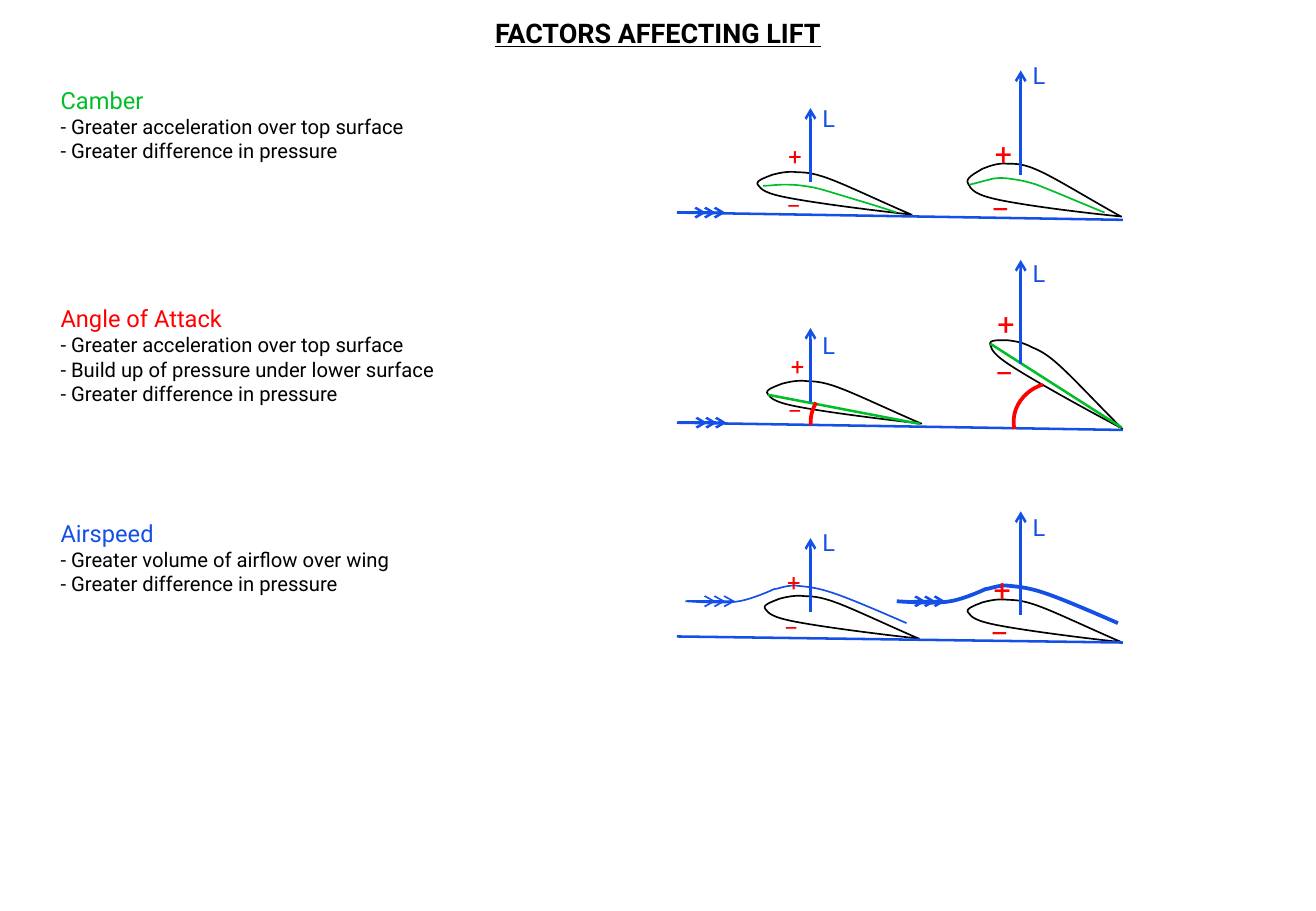
"""Build a slide on the factors that affect the lift of a wing."""
from lxml.etree import SubElement
from pptx import Presentation
from pptx.dml.color import RGBColor
from pptx.enum.shapes import MSO_CONNECTOR, MSO_SHAPE
from pptx.enum.text import MSO_ANCHOR, MSO_AUTO_SIZE, PP_ALIGN
from pptx.oxml.ns import qn
from pptx.util import Pt

PX = 9144
LINE_GAP = 16.75
COLORS = {"black": "000000", "green": "00BE28", "red": "FF0000", "blue": "1450E6"}

SECTIONS = [
    (0, "Camber", "green",
     ["Greater acceleration over top surface", "Greater difference in pressure"]),
    (5, "Angle of Attack", "red",
     ["Greater acceleration over top surface",
      "Build up of pressure under lower surface", "Greater difference in pressure"]),
    (4, "Airspeed", "blue",
     ["Greater volume of airflow over wing", "Greater difference in pressure"]),
]
WING = [(130, 22), (90, 23), (50, 23), (29, 22), (7, 21), (4, 18), (1, 15),
        (-3, 12), (6, 8), (11, 5), (16, 3), (23, 0), (32, 0), (40, -1),
        (47, -1), (63, 3), (79, 7), (104, 15), (129, 22)]
WINGS = [(623, 146, 7.7, 1), (796, 139, 7.7, 1.39), (631, 318, 7.7, 1),
         (808, 300, 29.3, 1), (629, 495, 7.7, 1), (796, 498, 7.7, 1)]
LOW_CAMBER = [(0, 0), (6, 0), (11, -1), (17, -1), (19, -1), (26, -1), (33, 0),
              (39, 1), (42, 1), (55, 5), (68, 9), (89, 15), (110, 22)]
HIGH_CAMBER = [(0, 0), (5, -1), (11, -3), (16, -4), (18, -5), (25, -6), (32, -5),
               (38, -4), (42, -4), (55, 0), (68, 5), (89, 14), (111, 23)]
AIRFLOW = [(0, 0), (16, 1), (32, 2), (44, 0), (56, -2), (73, -10), (73, -10),
           (76, -10), (82, -13), (90, -13), (98, -12), (106, -12), (121, -7),
           (136, -2), (159, 8), (182, 18)]
GROUND_LINES = [(175, 181), (348, 354), (524, 529)]
CHORDS = [((757, 349), (632, 325)), ((923, 352), (815, 283))]
ANGLE_ARCS = [(670, 165.21, 185.29), (837, 162, 212.31)]
WIND_ARROWS = [(557, 175, 1.5), (558, 348, 1.5), (565, 495, 1), (738, 495, 1.5)]
LIFTS = [(667, 150, 89), (667, 331, 270), (667, 504, 443),
         (840, 144, 58), (840, 300, 214), (840, 506, 421)]
LIFT_LABELS = [(667, 81, 74, 387, (0, 7, 6)), (840, 45, 46, 411, (0, 6, 8))]
SIGNS = [("+", 639, 112, 14), ("_", 639, 145, 14), ("+", 809, 106, 18),
         ("_", 808, 142, 18), ("+", 641, 285, 14), ("_", 640, 314, 14),
         ("+", 811, 246, 18), ("_", 811, 277, 18), ("+", 638, 463, 14),
         ("_", 637, 492, 14), ("+", 808, 465, 18), ("_", 807, 491, 18)]


def apply_values(target, values):
    """Set each named attribute of the target."""
    for name, value in values.items():
        setattr(target, name, value)


def write_span(para, text, size, color, **extra):
    """Add one formatted run of text to a paragraph."""
    span = para.add_run()
    span.text = text
    apply_values(span.font, {"name": "Roboto", "size": Pt(size), **extra})
    span.font.color.rgb = RGBColor.from_string(COLORS[color])


def add_title(page, text):
    """Place and format the title placeholder."""
    title = page.shapes.title
    apply_values(title, {"left": 0, "top": 9 * PX, "width": 1083 * PX, "height": 37 * PX})
    apply_values(title.text_frame, {"word_wrap": True, "vertical_anchor": MSO_ANCHOR.TOP,
                                    "auto_size": MSO_AUTO_SIZE.NONE})
    para = title.text_frame.paragraphs[0]
    apply_values(para, {"alignment": PP_ALIGN.CENTER, "line_spacing": 1.0,
                        "space_before": Pt(0)})
    write_span(para, text, 16, "black", bold=True, underline=True)


def add_text(page, left, top, width, height, lines):
    """Add a text box with one paragraph for each (gap, text, size, color) line."""
    box = page.shapes.add_textbox(left * PX, top * PX, width * PX, height * PX)
    frame = box.text_frame
    frame.word_wrap = True
    for index, (gap, *words) in enumerate(lines):
        para = frame.add_paragraph() if index else frame.paragraphs[0]
        para.space_before = Pt(gap * LINE_GAP)
        write_span(para, *words)


def add_sections(page):
    """Write the three factors and their effects in one text box."""
    lines = []
    for gap, heading, color, effects in SECTIONS:
        lines.append((gap, heading, 14, color))
        lines += [(0, f"- {effect}", 12, "black") for effect in effects]
    add_text(page, 40, 66, 477, 434, lines)


def style_line(shape, color, width):
    """Set the colour and the width in points of a line."""
    shape.line.color.rgb = RGBColor.from_string(COLORS[color])
    shape.line.width = Pt(width)


def add_line(page, start, end, color, width=1.5, arrow=False):
    """Draw a straight line, with an open arrowhead at its end if wanted."""
    ends = [value * PX for value in (*start, *end)]
    line = page.shapes.add_connector(MSO_CONNECTOR.STRAIGHT, *ends)
    style_line(line, color, width)
    if arrow:
        SubElement(line.line._get_or_add_ln(), qn("a:tailEnd"), type="arrow")
    SubElement(line._element.spPr, qn("a:effectLst"))


def bend_segments(shape):
    """Turn each three line segments of a freeform into one Bezier curve."""
    segments = list(shape._element.iter(qn("a:lnTo")))
    for first in range(0, len(segments), 3):
        bend, *others = segments[first:first + 3]
        bend.tag = qn("a:cubicBezTo")
        for other in others:
            bend.append(other[0])
            other.getparent().remove(other)


def add_curve(page, controls, left, top, color, width=1, rotation=0, stretch=1):
    """Draw an open curve whose control points are relative to left and top."""
    points = [((left + x) * PX, (top + y * stretch) * PX) for x, y in controls]
    builder = page.shapes.build_freeform(*points[0])
    builder.add_line_segments(points[1:], close=False)
    curve = builder.convert_to_shape()
    bend_segments(curve)
    curve.fill.background()
    style_line(curve, color, width)
    curve.shadow.inherit = False
    curve.rotation = rotation


def add_angle_arc(page, left, start, end):
    """Draw the arc that marks an angle of attack."""
    arc = page.shapes.add_shape(MSO_SHAPE.ARC, left * PX, 312 * PX, 62 * PX, 68 * PX)
    arc.adjustments[0], arc.adjustments[1] = start, end
    arc.rotation = 257.8
    arc.fill.background()
    style_line(arc, "red", 2.25)
    arc.shadow.inherit = False


def add_wind(page, left, top, width):
    """Draw three overlapping arrows that show the wind direction."""
    for shift in (0, 8, 16):
        add_line(page, (left + shift, top), (left + shift + 24, top), "blue", width, True)


def main():
    """Build and save the slide."""
    deck = Presentation()
    apply_values(deck, {"slide_width": 1083 * PX, "slide_height": 750 * PX})
    page = deck.slides.add_slide(deck.slide_layouts[5])
    add_title(page, "FACTORS AFFECTING LIFT")
    add_sections(page)
    for left, top, rotation, stretch in WINGS:
        add_curve(page, WING, left, top, "black", 1, rotation, stretch)
    for start, end in GROUND_LINES:
        add_line(page, (557, start), (924, end), "blue")
    add_curve(page, LOW_CAMBER, 628, 153, "green")
    add_curve(page, HIGH_CAMBER, 798, 152, "green")
    for tail, nose in CHORDS:
        add_line(page, tail, nose, "green")
    for arc in ANGLE_ARCS:
        add_angle_arc(page, *arc)
    for left, width in ((564, 1), (738, 2.25)):
        add_curve(page, AIRFLOW, left, 495, "blue", width)
    for wind in WIND_ARROWS:
        add_wind(page, *wind)
    for left, bottom, tip in LIFTS:
        add_line(page, (left, bottom), (left, tip), "blue", arrow=True)
    for left, top, width, height, gaps in LIFT_LABELS:
        add_text(page, left, top, width, height, [(gap, "L", 14, "blue") for gap in gaps])
    for sign, left, top, size in SIGNS:
        add_text(page, left, top, 34, 34 if size == 14 else 40, [(0, sign, size, "red")])
    deck.save("out.pptx")


if __name__ == "__main__":
    main()
